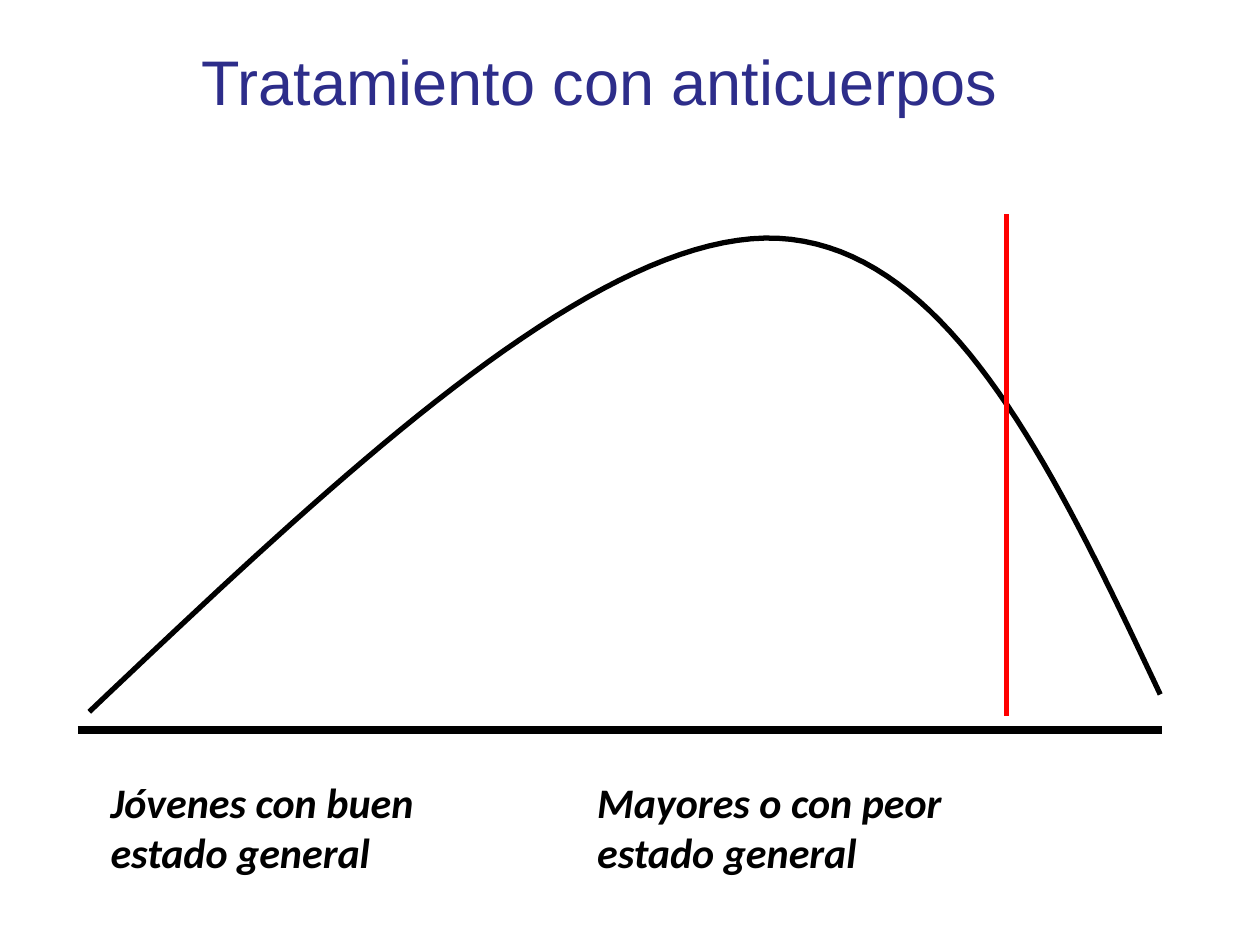
from lxml.etree import SubElement
from pptx import Presentation
from pptx.dml.color import RGBColor
from pptx.enum.shapes import MSO_CONNECTOR, MSO_SHAPE
from pptx.enum.text import MSO_ANCHOR, PP_ALIGN
from pptx.oxml.ns import qn
from pptx.util import Cm, Pt

COLORS = {"ink": "000000", "title": "2D2D8A", "limit": "FF0000", "border": "FFFFFF"}
CURVE_START = (1.8, 14.35)
CURVE_PARTS = [
    ((6.81, 9.6), (11.81, 4.88), (15.42, 4.8)),
    ((19.02, 4.75), (21.21, 9.37), (23.39, 14)),
]
LABELS = [
    ("Jóvenes con buen estado general", 1.98, 7.32),
    ("Mayores o con peor estado general", 11.79, 8.1),
]


def color(name):
    return RGBColor.from_string(COLORS[name])


def write_text(frame, text, font="Calibri", size=24, ink="ink", bold=False,
               italic=False, align=PP_ALIGN.LEFT, anchor=MSO_ANCHOR.TOP):
    frame.word_wrap = True
    frame.vertical_anchor = anchor
    para = frame.paragraphs[0]
    para.alignment = align
    span = para.add_run()
    span.text = text
    span.font.name = font
    span.font.size = Pt(size)
    span.font.bold = bold
    span.font.italic = italic
    span.font.color.rgb = color(ink)


def curve_points(start, parts, steps=40):
    points = [start]
    for first, second, end in parts:
        corners = (points[-1], first, second, end)
        for step in range(1, steps + 1):
            t = step / steps
            weights = ((1 - t) ** 3, 3 * t * (1 - t) ** 2, 3 * t ** 2 * (1 - t), t ** 3)
            points.append(tuple(
                sum(weight * corner[axis] for weight, corner in zip(weights, corners))
                for axis in (0, 1)))
    return points


class SlideBuilder:
    def __init__(self, deck):
        self.page = deck.slides.add_slide(deck.slide_layouts[5])
        self.shapes = self.page.shapes

    def stroke(self, item, ink, width):
        item.line.color.rgb = color(ink)
        item.line.width = Pt(width)

    def title(self, text, left, top, width, height):
        box = self.shapes.title
        box.left, box.top, box.width, box.height = map(Cm, (left, top, width, height))
        write_text(box.text_frame, text, font="Arial", size=36, ink="title",
                   align=PP_ALIGN.CENTER, anchor=MSO_ANCHOR.BOTTOM)

    def line(self, start, end, ink, width):
        line = self.shapes.add_connector(
            MSO_CONNECTOR.STRAIGHT, *map(Cm, (*start, *end)))
        self.stroke(line, ink, width)
        SubElement(line._element.spPr, qn("a:effectLst"))

    def curve(self, start, parts, ink, width):
        points = [(Cm(x), Cm(y)) for x, y in curve_points(start, parts)]
        builder = self.shapes.build_freeform(*points[0])
        builder.add_line_segments(points[1:], close=False)
        curve = builder.convert_to_shape()
        curve.fill.background()
        curve.shadow.inherit = False
        self.stroke(curve, ink, width)

    def label(self, text, left, top, width, height):
        box = self.shapes.add_shape(
            MSO_SHAPE.RECTANGLE, *map(Cm, (left, top, width, height)))
        box.fill.background()
        box.shadow.inherit = False
        self.stroke(box, "border", 0.75)
        write_text(box.text_frame, text, bold=True, italic=True)


def main():
    deck = Presentation()
    deck.slide_width, deck.slide_height = Cm(25.4), Cm(19.05)
    slide = SlideBuilder(deck)
    slide.title("Tratamiento con anticuerpos", 1.09, 0.71, 22, 1.8)
    slide.line((1.57, 14.71), (23.42, 14.71), "ink", 4.5)
    slide.curve(CURVE_START, CURVE_PARTS, "ink", 3)
    slide.line((20.29, 4.32), (20.29, 14.43), "limit", 3)
    for text, left, width in LABELS:
        slide.label(text, left, 15.52, width, 2.31)
    deck.save("out.pptx")


if __name__ == "__main__":
    main()
